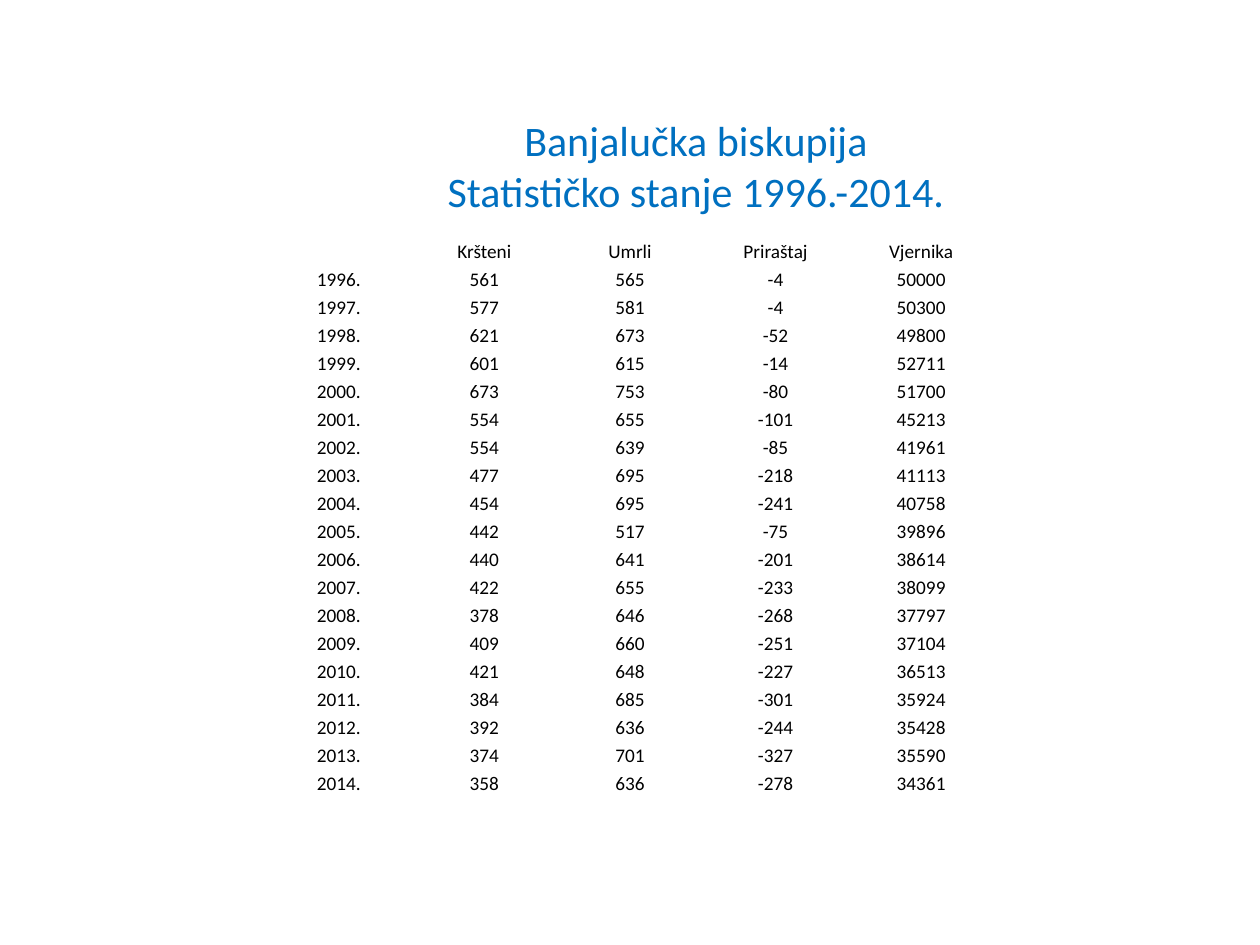
from pptx import Presentation
from pptx.dml.color import RGBColor
from pptx.enum.text import MSO_ANCHOR, PP_ALIGN
from pptx.util import Pt

CENTER = PP_ALIGN.CENTER
MIDDLE, BOTTOM = MSO_ANCHOR.MIDDLE, MSO_ANCHOR.BOTTOM
PX = 914400 / 126

THEME = {
    "font": "Calibri",
    "heading": RGBColor(0x00, 0x70, 0xC0),
    "body": RGBColor(0x00, 0x00, 0x00),
    "heading_size": 24,
    "body_size": 11,
}

HEADER = ["", "Kršteni", "Umrli", "Priraštaj", "Vjernika"]
FIRST_YEAR = 1996
STATISTICS = [
    (561, 565, -4, 50000),
    (577, 581, -4, 50300),
    (621, 673, -52, 49800),
    (601, 615, -14, 52711),
    (673, 753, -80, 51700),
    (554, 655, -101, 45213),
    (554, 639, -85, 41961),
    (477, 695, -218, 41113),
    (454, 695, -241, 40758),
    (442, 517, -75, 39896),
    (440, 641, -201, 38614),
    (422, 655, -233, 38099),
    (378, 646, -268, 37797),
    (409, 660, -251, 37104),
    (421, 648, -227, 36513),
    (384, 685, -301, 35924),
    (392, 636, -244, 35428),
    (374, 701, -327, 35590),
    (358, 636, -278, 34361),
]


def px(*lengths):
    return [round(length * PX) for length in lengths]


def write(frame, text, size, color, align=CENTER):
    paragraph = frame.paragraphs[0]
    paragraph.text = text
    paragraph.alignment = align
    for run in paragraph.runs:
        run.font.name = THEME["font"]
        run.font.size = Pt(size)
        run.font.color.rgb = color
    paragraph._p.get_or_add_endParaRPr().set("sz", str(size * 100))


prs = Presentation()
prs.slide_width, prs.slide_height = px(1260, 945)
slide = prs.slides.add_slide(prs.slide_layouts[6])

heading = slide.shapes.add_textbox(*px(159, 86, 1074, 158)).text_frame
heading.word_wrap = True
heading.vertical_anchor = MIDDLE
write(heading, "Banjalučka biskupija\vStatističko stanje 1996.-2014.",
      size=THEME["heading_size"], color=THEME["heading"])

rows = [HEADER] + [[f"{year}.", *map(str, values)]
                   for year, values in enumerate(STATISTICS, FIRST_YEAR)]
statistics = slide.shapes.add_table(
    len(rows), len(HEADER), *px(266, 236, 728, 28 * len(rows))).table
statistics.first_row = False
statistics.horz_banding = False

for r, row in enumerate(rows):
    for c, value in enumerate(row):
        cell = statistics.cell(r, c)
        cell.fill.background()
        cell.vertical_anchor = BOTTOM
        cell.margin_left = cell.margin_right = 0
        cell.margin_top = cell.margin_bottom = 0
        write(cell.text_frame, value, size=THEME["body_size"], color=THEME["body"])

style_id = statistics._tbl.tblPr.find("{*}tableStyleId")
style_id.text = "{2D5ABB26-0587-4C30-8999-92F81FD0307C}"

prs.save("out.pptx")
